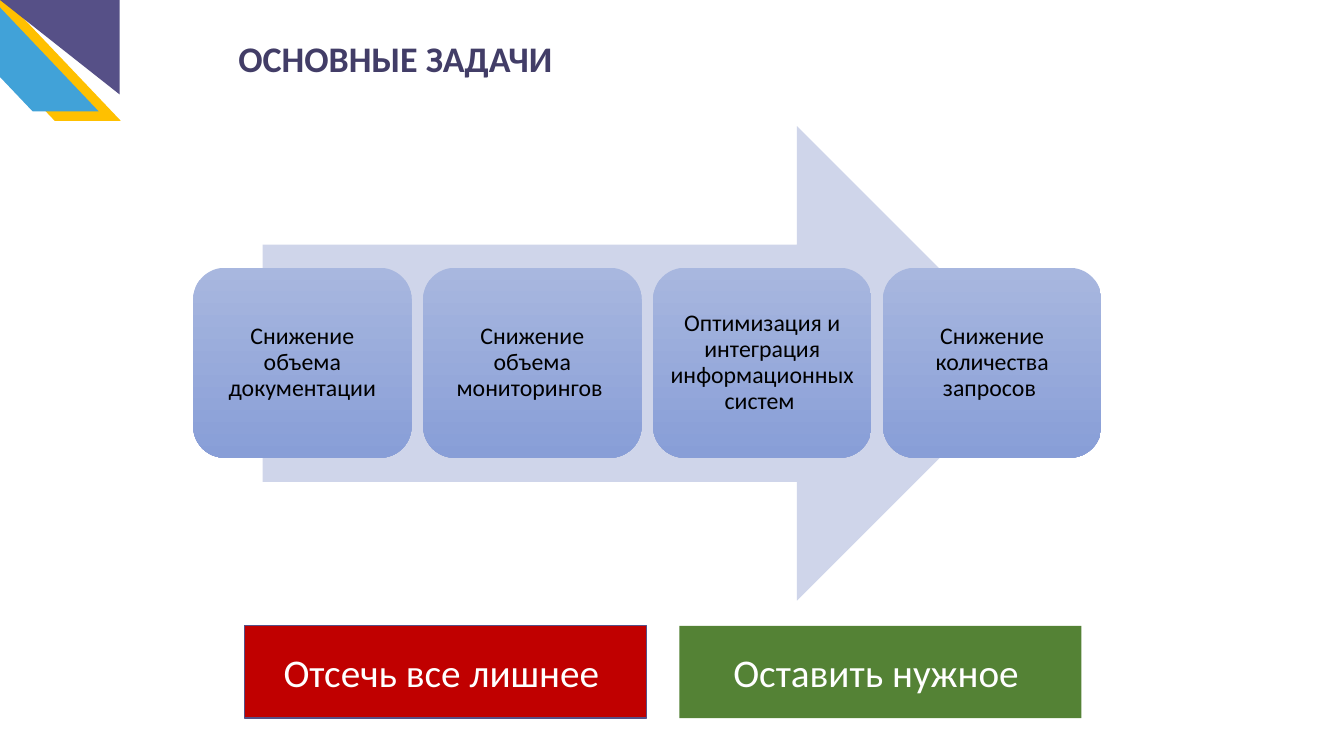
from dataclasses import dataclass

from pptx import Presentation
from pptx.dml.color import RGBColor
from pptx.enum.shapes import MSO_SHAPE as Preset
from pptx.enum.text import MSO_ANCHOR as Anchor, PP_ALIGN as Align
from pptx.util import Pt

PX = 9525  # EMU per px, 96 px to the inch


@dataclass(frozen=True)
class Theme:
    font: str = "Calibri"
    title_size: float = 25.7
    card_size: float = 17
    button_size: float = 28
    title: str = "423D67"
    purple: str = "565087"
    yellow: str = "FFC000"
    blue: str = "41A2D8"
    arrow: str = "CFD5EA"
    card_top: str = "A8B7DF"
    card_bottom: str = "889ED7"
    red: str = "C00000"
    green: str = "548235"
    black: str = "000000"
    white: str = "FFFFFF"


theme = Theme()
presentation = Presentation()
presentation.slide_width, presentation.slide_height = 1280 * PX, 720 * PX
slide = presentation.slides.add_slide(presentation.slide_layouts[6])


def add_shape(preset, left, top, width, height, color):
    shape = slide.shapes.add_shape(preset, left * PX, top * PX, width * PX, height * PX)
    shape.shadow.inherit = False
    shape.fill.solid()
    shape.fill.fore_color.rgb = RGBColor.from_string(color)
    shape.line.fill.background()
    return shape


def write(shape, text, size, color, align=Align.CENTER):
    frame = shape.text_frame
    frame.word_wrap = True
    paragraph = frame.paragraphs[0]
    paragraph.text = text
    paragraph.alignment = align
    paragraph.font.name = theme.font
    paragraph.font.size = Pt(size)
    paragraph.font.color.rgb = RGBColor.from_string(color)
    return paragraph


# Corner ornament
for left, top, color in ((-61, -4, theme.yellow), (-82, -13, theme.blue)):
    stripe = add_shape(Preset.PARALLELOGRAM, left, top, 176, 119, color)
    stripe.adjustments[0] = 0.95
    stripe.element.spPr.xfrm.set("flipH", "1")
triangle = add_shape(Preset.RIGHT_TRIANGLE, 0, 0, 114, 90, theme.purple)
triangle.rotation = 180

# Title
title = slide.shapes.add_textbox(227 * PX, 30 * PX, 670 * PX, 51 * PX)
title.text_frame.margin_left = 0
heading = write(title, "ОСНОВНЫЕ ЗАДАЧИ", theme.title_size, theme.title, Align.LEFT)
heading.font.bold = True

# Arrow with the four tasks
add_shape(Preset.RIGHT_ARROW, 250, 120, 735, 452, theme.arrow)
tasks = (
    "Снижение объема документации",
    "Снижение объема мониторингов ",
    "Оптимизация и интеграция информационных систем ",
    "Снижение количества запросов ",
)
for index, task in enumerate(tasks):
    card = add_shape(Preset.ROUNDED_RECTANGLE, 184 + 219 * index, 255, 208, 181, theme.card_top)
    card.fill.gradient()
    card.fill.gradient_angle = 270
    for stop, color in zip(card.fill.gradient_stops, (theme.card_top, theme.card_bottom)):
        stop.color.rgb = RGBColor.from_string(color)
    frame = card.text_frame
    frame.vertical_anchor = Anchor.MIDDLE
    frame.margin_left = frame.margin_right = frame.margin_top = frame.margin_bottom = 7 * PX
    write(card, task, theme.card_size, theme.black).line_spacing = 0.9

# Conclusions
buttons = (
    (233, "Отсечь все лишнее ", theme.red),
    (647, "Оставить нужное ", theme.green),
)
for left, text, color in buttons:
    button = add_shape(Preset.RECTANGLE, left, 596, 383, 88, color)
    button.text_frame.vertical_anchor = Anchor.MIDDLE
    write(button, text, theme.button_size, theme.white)
    if color == theme.red:
        button.line.color.rgb = RGBColor.from_string(theme.purple)
        button.line.width = Pt(1)

presentation.save("out.pptx")
